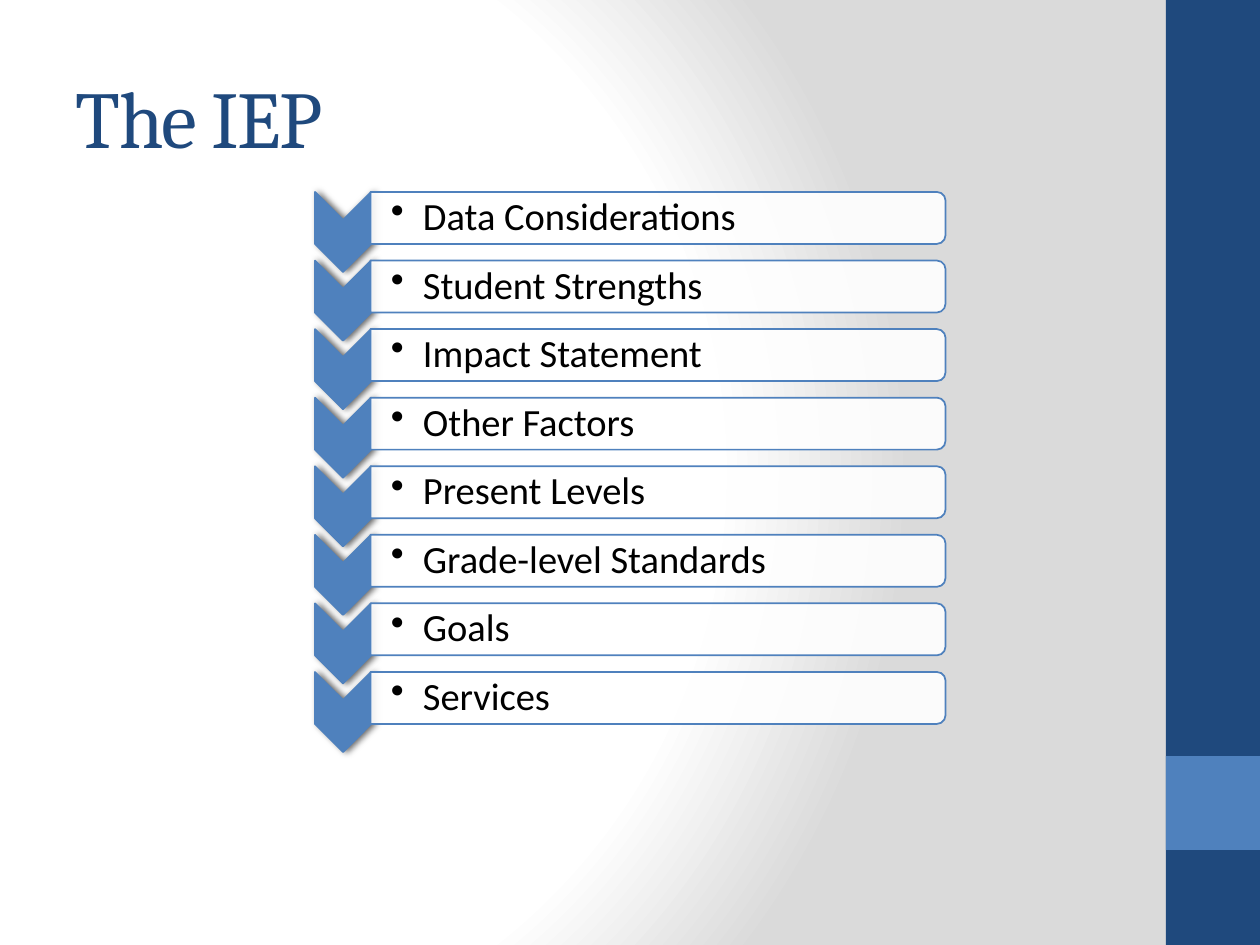
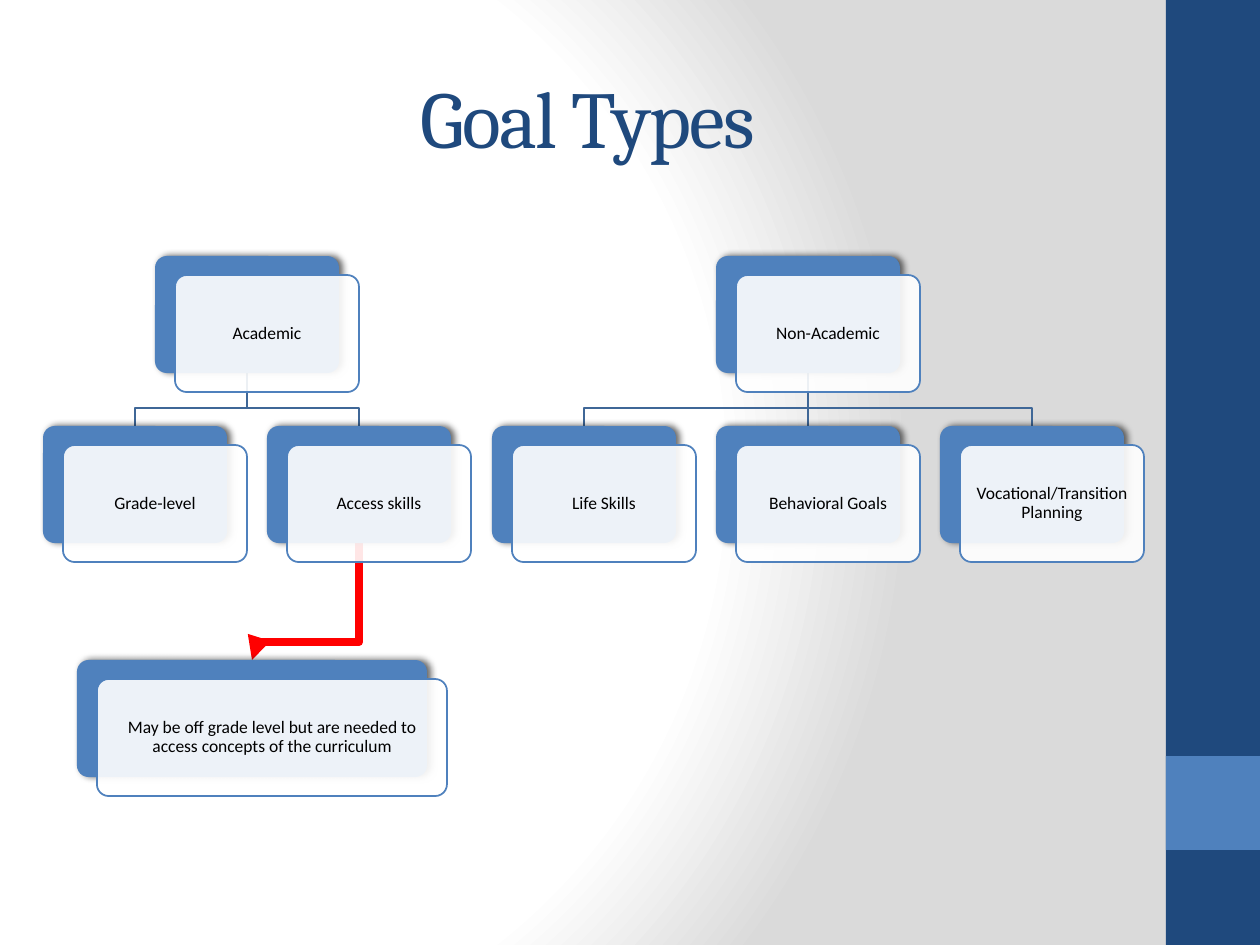
from dataclasses import dataclass

from lxml.etree import SubElement
from pptx import Presentation
from pptx.dml.color import RGBColor
from pptx.enum.shapes import MSO_CONNECTOR, MSO_SHAPE
from pptx.enum.text import MSO_ANCHOR, PP_ALIGN
from pptx.oxml import parse_xml
from pptx.oxml.ns import nsdecls, qn
from pptx.util import Emu, Pt

# Content
IEP_TITLE = "The IEP"
IEP_PARTS = [
    "Data Considerations", "Student Strengths", "Impact Statement", "Other Factors",
    "Present Levels", "Grade-level Standards", "Goals", "Services",
]

GOAL_TITLE = "Goal Types"
# Goal: (column, row, width in px); half columns sit between two children
GOALS = {
    "Academic": (0.5, 0, 184),
    "Grade-level": (0, 1, 184),
    "Access skills": (1, 1, 184),
    "May be off grade level but are needed to access concepts of the curriculum":
        (0.15, 2, 350),
    "Non-Academic": (3, 0, 184),
    "Life Skills": (2, 1, 184),
    "Behavioral Goals": (3, 1, 184),
    "Vocational/Transition Planning": (4, 1, 184),
}
ACCESS_NOTE = list(GOALS)[3]
GOAL_LINKS = [
    ("Non-Academic", "Vocational/Transition Planning"),
    ("Non-Academic", "Behavioral Goals"),
    ("Non-Academic", "Life Skills"),
    ("Access skills", ACCESS_NOTE),
    ("Academic", "Access skills"),
    ("Academic", "Grade-level"),
]


@dataclass(frozen=True)
class Theme:
    navy: str = "1F497D"
    blue: str = "4F81BD"
    link: str = "3F6797"
    red: str = "FF0000"
    white: str = "FFFFFF"
    grey: str = "DADADA"
    black: str = "000000"
    title_font: str = "Cambria"
    body_font: str = "Calibri"
    title_size: int = 46
    list_size: int = 22
    goal_size: int = 10


THEME = Theme()

# Layout in px
SCALE = 914400 / 126
SLIDE_SIZE = (1260, 945)
TITLE_BOX = (63, 38, 1050, 157)
BANDS = [((1166, 0, 94, 945), THEME.navy), ((1166, 756, 94, 94), THEME.blue)]
CHEVRON_CENTRE, CHEVRON_SIZE = (343, 232), (80, 56)
BAR_CENTRE, BAR_SIZE = (658, 218), (52, 575)
LIST_LEFT, LIST_WIDTH, LIST_HEIGHT, LIST_SPAN = 370, 572, 47, 480
BULLET_INDENT = 32
GOAL_LEFT, GOAL_SPAN, GOAL_HEIGHT = 43, 897, 117
ROW_TOPS = (256, 426, 660)
CARD_SHIFT = (20, 19)
CARD_MARGIN = 4
ELBOW_RISE = 18


def px(length):
    return Emu(round(length * SCALE))


def centred(centre, size):
    return (centre[0] - size[0] / 2, centre[1] - size[1] / 2, *size)


# Drawing helpers
def add_panel(slide, kind, box, fill, line=None, alpha=None, shadow=False, turn=0):
    shape = slide.shapes.add_shape(kind, *map(px, box))
    shape.rotation = turn
    shape.shadow.inherit = False
    shape.fill.solid()
    shape.fill.fore_color.rgb = RGBColor.from_string(fill)
    properties = shape._element.spPr
    if alpha:
        colour = properties.find(qn("a:solidFill"))[0]
        SubElement(colour, qn("a:alpha"), val=str(alpha * 1000))
    if line:
        style_line(shape.line, line, 1)
    else:
        shape.line.fill.background()
    if shadow:
        properties.find(qn("a:effectLst")).append(parse_xml(
            f'<a:outerShdw {nsdecls("a")} blurRad="50800" dist="25400" dir="0" '
            f'rotWithShape="0"><a:srgbClr val="{THEME.black}">'
            '<a:alpha val="60000"/></a:srgbClr></a:outerShdw>'))
    return shape


def style_line(line, colour, width):
    line.color.rgb = RGBColor.from_string(colour)
    line.width = Pt(width)


def add_text(slide, box, text, font, size, colour, margins, align=PP_ALIGN.LEFT):
    frame = slide.shapes.add_textbox(*map(px, box)).text_frame
    frame.word_wrap = True
    frame.vertical_anchor = MSO_ANCHOR.MIDDLE
    (frame.margin_left, frame.margin_top,
     frame.margin_right, frame.margin_bottom) = map(px, margins)
    paragraph = frame.paragraphs[0]
    paragraph.alignment = align
    run = paragraph.add_run()
    run.text = text
    run.font.name = font
    run.font.size = Pt(size)
    run.font.color.rgb = RGBColor.from_string(colour)
    return paragraph, run


def add_base_slide(presentation, title, align):
    """Add a slide with the shared background, side bands and title style."""
    slide = presentation.slides.add_slide(presentation.slide_layouts[6])
    slide.background.fill.solid()
    solid = slide._element.find(".//" + qn("p:bgPr")).find(qn("a:solidFill"))
    stops = "".join(
        f'<a:gs pos="{position * 1000}"><a:srgbClr val="{colour}"/></a:gs>'
        for position, colour in ((0, THEME.white), (75, THEME.white), (100, THEME.grey)))
    solid.getparent().replace(solid, parse_xml(
        f'<a:gradFill {nsdecls("a")} rotWithShape="1"><a:gsLst>{stops}</a:gsLst>'
        '<a:path path="circle"><a:fillToRect l="20000" t="50000" r="100000" b="50000"/>'
        '</a:path></a:gradFill>'))
    for box, colour in BANDS:
        add_panel(slide, MSO_SHAPE.RECTANGLE, box, colour)
    run = add_text(slide, TITLE_BOX, title, THEME.title_font, THEME.title_size,
                   THEME.navy, (13, 6, 13, 6), align)[1]
    run._r.get_or_add_rPr().set("spc", "-100")
    return slide


# Slide 1: chevron list
def add_bullet(paragraph):
    properties = paragraph._p.get_or_add_pPr()
    properties.set("marL", str(px(BULLET_INDENT)))
    properties.set("indent", str(-px(BULLET_INDENT)))
    SubElement(properties, qn("a:buChar"), char="•")


def build_iep_slide(presentation):
    slide = add_base_slide(presentation, IEP_TITLE, PP_ALIGN.LEFT)
    for index, part in enumerate(IEP_PARTS):
        drop = index * LIST_SPAN / (len(IEP_PARTS) - 1)
        chevron_x, chevron_y = CHEVRON_CENTRE
        bar_x, bar_y = BAR_CENTRE
        add_panel(slide, MSO_SHAPE.CHEVRON,
                  centred((chevron_x, chevron_y + drop), CHEVRON_SIZE),
                  THEME.blue, line=THEME.blue, shadow=True, turn=90)
        add_panel(slide, MSO_SHAPE.ROUND_2_SAME_RECTANGLE,
                  centred((bar_x, bar_y + drop), BAR_SIZE),
                  THEME.white, line=THEME.blue, alpha=90, turn=90)
        text_box = (LIST_LEFT, bar_y + drop - LIST_HEIGHT / 2, LIST_WIDTH, LIST_HEIGHT)
        paragraph, _ = add_text(slide, text_box, part, THEME.body_font,
                                THEME.list_size, THEME.black, (21, 2, 2, 2))
        paragraph.line_spacing = 0.9
        paragraph.space_after = Pt(3.3)
        add_bullet(paragraph)


# Slide 2: goal tree
def goal_box(goal):
    column, row, width = GOALS[goal]
    left = round(GOAL_LEFT + column * GOAL_SPAN / 4)
    return left, ROW_TOPS[row], width, GOAL_HEIGHT


def add_link(slide, parent, child):
    left, top, width, height = goal_box(parent)
    start_x, start_y = left + width // 2, top + height
    left, end_y, width, _ = goal_box(child)
    end_x = left + width // 2
    if start_x == end_x:
        link = slide.shapes.add_connector(
            MSO_CONNECTOR.STRAIGHT, *map(px, (start_x, start_y, end_x, end_y)))
        SubElement(link._element.spPr, qn("a:effectLst"))
    else:
        elbow_y = end_y - ELBOW_RISE
        builder = slide.shapes.build_freeform(start_x, start_y, scale=SCALE)
        builder.add_line_segments(
            [(start_x, elbow_y), (end_x, elbow_y), (end_x, end_y)], close=False)
        link = builder.convert_to_shape()
        link.fill.background()
        link.shadow.inherit = False
    if child == ACCESS_NOTE:
        style_line(link.line, THEME.red, 4.5)
        SubElement(link._element.spPr.find(qn("a:ln")), qn("a:tailEnd"), type="triangle")
    else:
        style_line(link.line, THEME.link, 1)


def add_goal(slide, goal):
    left, top, width, height = goal_box(goal)
    shift_x, shift_y = CARD_SHIFT
    card = (left + shift_x, top + shift_y, width, height)
    back = add_panel(slide, MSO_SHAPE.ROUNDED_RECTANGLE, (left, top, width, height),
                     THEME.blue, shadow=True)
    front = add_panel(slide, MSO_SHAPE.ROUNDED_RECTANGLE, card,
                      THEME.white, line=THEME.blue, alpha=90)
    for shape in (back, front):
        shape.adjustments[0] = 0.1
    text_box = (card[0] + CARD_MARGIN, card[1] + CARD_MARGIN,
                width - 2 * CARD_MARGIN, height - 2 * CARD_MARGIN)
    paragraph, _ = add_text(slide, text_box, goal, THEME.body_font, THEME.goal_size,
                            THEME.black, (5, 5, 5, 5), PP_ALIGN.CENTER)
    paragraph.line_spacing = 0.9
    paragraph.space_after = Pt(3.5)


def build_goal_slide(presentation):
    slide = add_base_slide(presentation, GOAL_TITLE, PP_ALIGN.CENTER)
    for parent, child in GOAL_LINKS:
        add_link(slide, parent, child)
    for goal in GOALS:
        add_goal(slide, goal)


def main():
    presentation = Presentation()
    presentation.slide_width, presentation.slide_height = map(px, SLIDE_SIZE)
    build_iep_slide(presentation)
    build_goal_slide(presentation)
    presentation.save("out.pptx")


if __name__ == "__main__":
    main()
